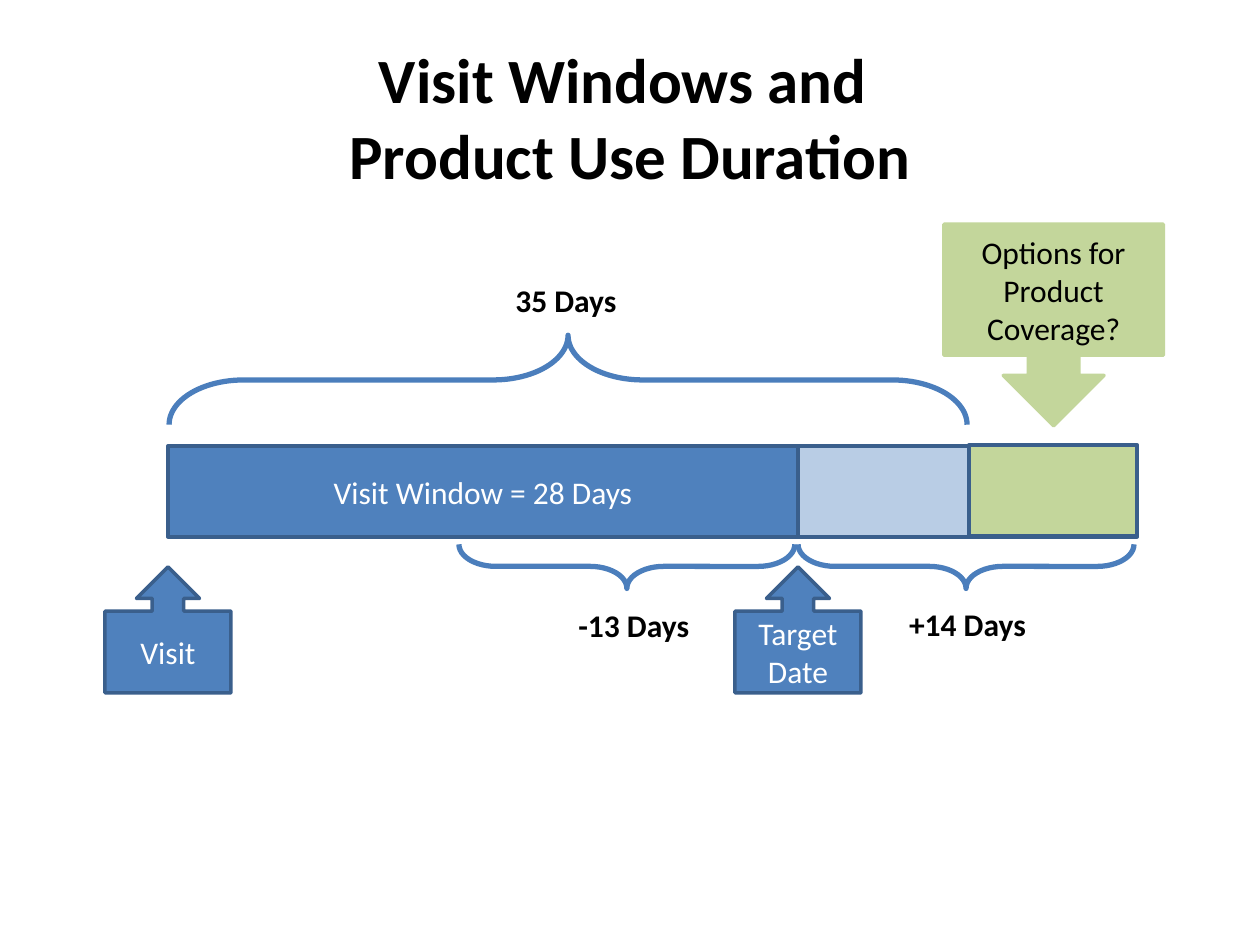
from dataclasses import dataclass

from pptx import Presentation
from pptx.dml.color import RGBColor
from pptx.enum.shapes import MSO_SHAPE as Shape
from pptx.enum.text import MSO_ANCHOR as Anchor, PP_ALIGN as Align
from pptx.util import Inches, Pt

# Grid of 12 columns and 15 rows
WIDE, HIGH = 10, 7.5
COL, ROW = WIDE / 12, HIGH / 15
FONT = "Calibri"
HUES = {
    "blue": "4F81BD", "pale": "B9CDE5", "green": "C3D69B",
    "edge": "3A5F8C", "brace": "4B7EBC", "black": "000000", "white": "FFFFFF",
}


@dataclass
class Box:
    col: float
    row: float
    cols: float
    rows: float

    def inches(self) -> tuple:
        return (self.col * COL, self.row * ROW, self.cols * COL, self.rows * ROW)

    def place(self) -> list:
        return [Inches(n) for n in self.inches()]


@dataclass
class Block:
    kind: Shape
    box: Box
    fill: str
    edge: str = "edge"
    text: str = ""
    ink: str = "white"


@dataclass
class Brace:
    box: Box  # area covered after turning
    turn: int


@dataclass
class Label:
    box: Box
    text: str


def hue(name: str) -> RGBColor:
    return RGBColor.from_string(HUES[name])


def write(para, text: str, ink: str, size: int = 18, bold: bool = False) -> None:
    run = para.add_run()
    run.text = text
    font = run.font
    font.name, font.size, font.bold = FONT, Pt(size), bold
    font.color.rgb = hue(ink)


def draw_title(slide, box: Box, lines: list) -> None:
    frame = slide.shapes.add_textbox(*box.place()).text_frame
    frame.word_wrap = True
    frame.vertical_anchor = Anchor.MIDDLE
    para = frame.paragraphs[0]
    para.alignment = Align.CENTER
    for i, line in enumerate(lines):
        if i:
            para.add_line_break()
        write(para, line, "black", 36, True)


def draw_block(slide, block: Block) -> None:
    shape = slide.shapes.add_shape(block.kind, *block.box.place())
    shape.shadow.inherit = False
    shape.fill.solid()
    shape.fill.fore_color.rgb = hue(block.fill)
    shape.line.color.rgb = hue(block.edge)
    shape.line.width = Pt(2)
    if block.text:
        frame = shape.text_frame
        frame.word_wrap = True
        frame.vertical_anchor = Anchor.MIDDLE
        para = frame.paragraphs[0]
        para.alignment = Align.CENTER
        write(para, block.text, block.ink)


def draw_brace(slide, brace: Brace) -> None:
    x, y, w, h = brace.box.inches()
    # A quarter turn about the centre swaps width and height
    left, top = x + (w - h) / 2, y + (h - w) / 2
    shape = slide.shapes.add_shape(
        Shape.RIGHT_BRACE, Inches(left), Inches(top), Inches(h), Inches(w))
    shape.rotation = brace.turn
    shape.adjustments[0] = 0.835
    shape.shadow.inherit = False
    shape.fill.background()
    shape.line.color.rgb = hue("brace")
    shape.line.width = Pt(3)


def draw_label(slide, label: Label) -> None:
    frame = slide.shapes.add_textbox(*label.box.place()).text_frame
    frame.word_wrap = False
    write(frame.paragraphs[0], label.text, "black", bold=True)


START, GOAL = 1.6, 7.6  # columns of the visit and the target date
UP, DOWN = Shape.UP_ARROW_CALLOUT, Shape.DOWN_ARROW_CALLOUT

BLOCKS = [
    # Timeline
    Block(Shape.RECTANGLE, Box(START, 7.08, GOAL - START, 1.44), "blue",
          text="Visit Window = 28 Days"),
    Block(Shape.RECTANGLE, Box(GOAL, 7.08, 3.23, 1.44), "pale"),
    Block(Shape.RECTANGLE, Box(9.23, 7.06, 1.6, 1.44), "green"),
    # Callouts
    Block(UP, Box(START - 0.6, 9, 1.2, 2), "blue", text="Visit"),
    Block(UP, Box(GOAL - 0.6, 9, 1.2, 2), "blue", text="Target Date"),
    Block(DOWN, Box(8.99, 3.56, 2.09, 3.2), "green", "green",
          "Options for Product Coverage?", "black"),
]
BRACES = [
    Brace(Box(1.61, 5.32, 7.6, 1.42), 270),
    Brace(Box(GOAL, 8.64, 3.2, 0.7), 90),
    Brace(Box(4.37, 8.64, 3.2, 0.7), 90),
]
LABELS = [
    Label(Box(4.79, 4.36, 1.21, 0.8), "35 Days"),
    Label(Box(5.39, 9.52, 1.31, 0.8), "-13 Days"),
    Label(Box(8.54, 9.5, 1.37, 0.8), "+14 Days"),
]


def main() -> None:
    deck = Presentation()
    deck.slide_width, deck.slide_height = Inches(WIDE), Inches(HIGH)
    slide = deck.slides.add_slide(deck.slide_layouts[6])
    draw_title(slide, Box(0.6, 0.6, 10.8, 2.5),
               ["Visit Windows and ", "Product Use Duration"])
    for block in BLOCKS:
        draw_block(slide, block)
    for brace in BRACES:
        draw_brace(slide, brace)
    for label in LABELS:
        draw_label(slide, label)
    deck.save("out.pptx")


if __name__ == "__main__":
    main()
